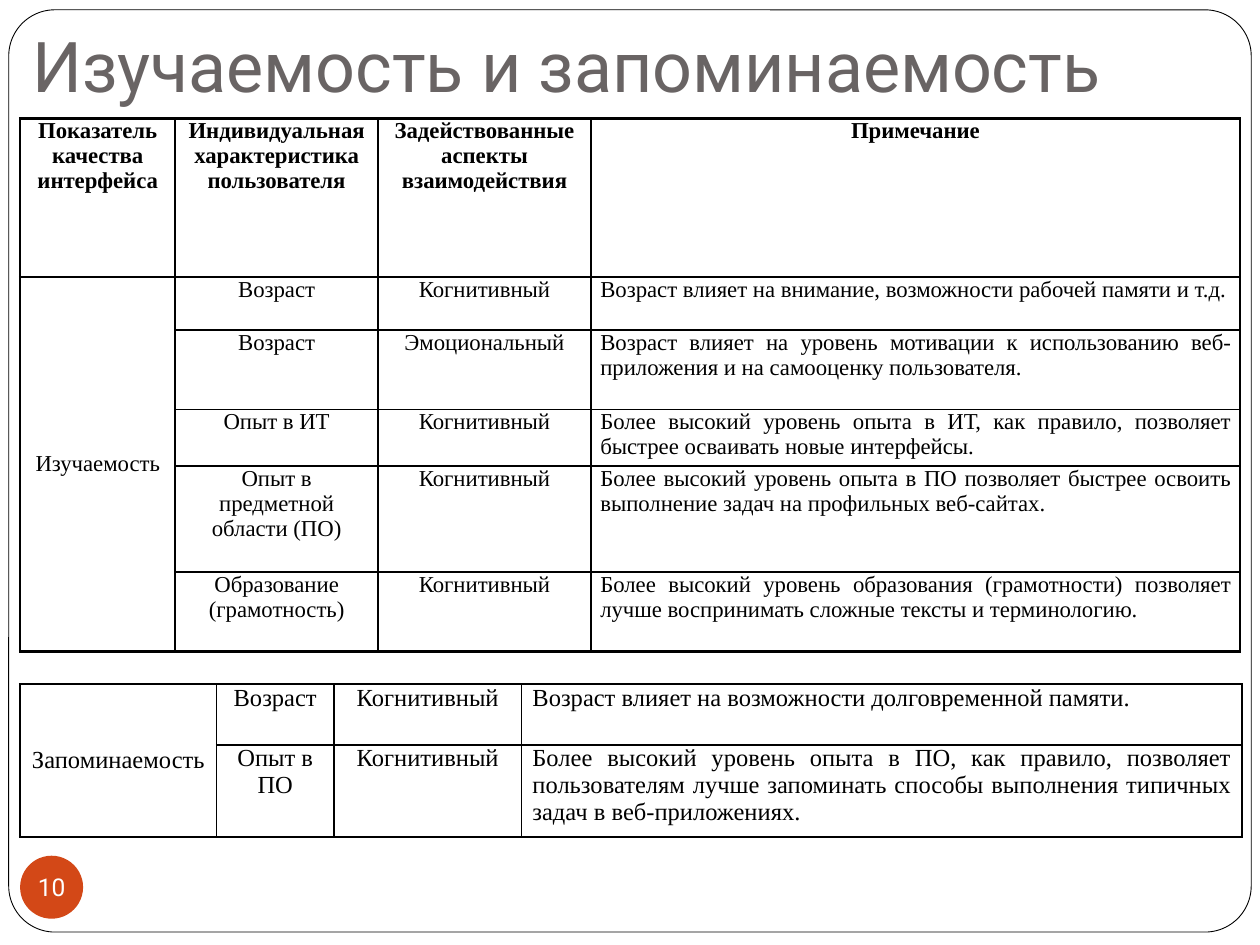
from dataclasses import dataclass

from lxml import etree
from pptx import Presentation
from pptx.dml.color import RGBColor
from pptx.enum import shapes, text
from pptx.oxml import ns
from pptx.util import Pt

BLACK = RGBColor(0x00, 0x00, 0x00)
WHITE = RGBColor(0xFF, 0xFF, 0xFF)
GREY = RGBColor(0x69, 0x64, 0x64)
ORANGE = RGBColor(0xD3, 0x48, 0x17)
HEADING_FONT = "Roboto"
TABLE_FONT = "Times New Roman"
THIN, THICK = 1, 1.5
LEFT = 11.5


@dataclass
class Grid:
    top: float
    cols: list[float]
    rows: list[float]
    cells: list[list[str]]
    size: float
    inset: float
    header_rows: int


LEARNABILITY = Grid(
    top=67.7,
    cols=[88.6, 115.9, 121.7, 370.8],
    rows=[90.7, 30.2, 45.4, 32.4, 60.5, 45.4],
    cells=[
        ["Показатель качества интерфейса", "Индивидуальная характеристика пользователя",
         "Задействованные аспекты взаимодействия", "Примечание"],
        ["Изучаемость", "Возраст", "Когнитивный",
         "Возраст влияет на внимание, возможности рабочей памяти и т.д."],
        ["", "Возраст", "Эмоциональный",
         "Возраст влияет на уровень мотивации к использованию веб-приложения "
         "и на самооценку пользователя."],
        ["", "Опыт в ИТ", "Когнитивный",
         "Более высокий уровень опыта в ИТ, как правило, позволяет быстрее "
         "осваивать новые интерфейсы."],
        ["", "Опыт в предметной области (ПО)", "Когнитивный",
         "Более высокий уровень опыта в ПО позволяет быстрее освоить "
         "выполнение задач на профильных веб-сайтах."],
        ["", "Образование (грамотность)", "Когнитивный",
         "Более высокий уровень образования (грамотности) позволяет лучше "
         "воспринимать сложные тексты и терминологию."],
    ],
    size=13, inset=5.4, header_rows=1,
)

MEMORABILITY = Grid(
    top=391,
    cols=[112.3, 67, 107.3, 411.8],
    rows=[34.6, 52.6],
    cells=[
        ["Запоминаемость", "Возраст", "Когнитивный",
         "Возраст влияет на возможности долговременной памяти."],
        ["", "Опыт в ПО", "Когнитивный",
         "Более высокий уровень опыта в ПО, как правило, позволяет пользователям "
         "лучше запоминать способы выполнения типичных задач в веб-приложениях."],
    ],
    size=14, inset=6.2, header_rows=0,
)


def set_font(p, name: str, size: float, color: RGBColor, bold: bool = False) -> None:
    p.font.name, p.font.size, p.font.bold = name, Pt(size), bold
    p.font.color.rgb = color


def set_margins(obj, left: float, top: float, right: float, bottom: float) -> None:
    obj.margin_left, obj.margin_top = Pt(left), Pt(top)
    obj.margin_right, obj.margin_bottom = Pt(right), Pt(bottom)


def set_borders(cell, widths: dict[str, float]) -> None:
    tc_pr = cell._tc.get_or_add_tcPr()
    for side, width in widths.items():
        ln = etree.SubElement(tc_pr, ns.qn(f"a:ln{side}"), w=str(Pt(width)))
        fill = etree.SubElement(ln, ns.qn("a:solidFill"))
        etree.SubElement(fill, ns.qn("a:srgbClr"), val=str(BLACK))


def add_grid(s, grid: Grid) -> None:
    n_rows, n_cols = len(grid.rows), len(grid.cols)
    frame = s.shapes.add_table(n_rows, n_cols, Pt(LEFT), Pt(grid.top),
                               Pt(sum(grid.cols)), Pt(sum(grid.rows)))
    table = frame.table
    table.first_row = table.horz_banding = False
    for col, width in zip(table.columns, grid.cols):
        col.width = Pt(width)
    for row, height in zip(table.rows, grid.rows):
        row.height = Pt(height)
    table.cell(grid.header_rows, 0).merge(table.cell(n_rows - 1, 0))

    thick_rows = {0, grid.header_rows, n_rows}
    for i, row in enumerate(grid.cells):
        for j, value in enumerate(row):
            cell = table.cell(i, j)
            if cell.is_spanned:
                cell.fill.background()
                continue
            end = i + cell.span_height
            set_borders(cell, {
                "L": THICK if j == 0 else THIN,
                "R": THICK if j == n_cols - 1 else THIN,
                "T": THICK if i in thick_rows else THIN,
                "B": THICK if end in thick_rows else THIN,
            })
            cell.fill.background()
            set_margins(cell, grid.inset, 0, grid.inset, 0)
            if cell.is_merge_origin:
                cell.vertical_anchor = text.MSO_ANCHOR.MIDDLE
            header = i < grid.header_rows
            p = cell.text_frame.paragraphs[0]
            p.text = value
            p.space_before = p.space_after = Pt(2)
            note = j == n_cols - 1 and not header
            p.alignment = text.PP_ALIGN.JUSTIFY if note else text.PP_ALIGN.CENTER
            set_font(p, TABLE_FONT, grid.size, BLACK, header)


def add_frame(s) -> None:
    sp = s.shapes.add_shape(shapes.MSO_SHAPE.ROUNDED_RECTANGLE,
                            Pt(5), Pt(5.6), Pt(710), Pt(527))
    sp.adjustments[0] = 0.05
    sp.shadow.inherit = False
    sp.fill.solid()
    sp.fill.fore_color.rgb = WHITE
    sp.line.color.rgb = BLACK
    sp.line.width = Pt(0.5)


def add_title(s, title: str) -> None:
    tf = s.shapes.add_textbox(Pt(LEFT), Pt(5.6), Pt(698), Pt(62.6)).text_frame
    tf.word_wrap = True
    tf.vertical_anchor = text.MSO_ANCHOR.BOTTOM
    set_margins(tf, 7.2, 3.6, 7.2, 7.2)
    p = tf.paragraphs[0]
    p.text = title
    set_font(p, HEADING_FONT, 40, GREY)


def add_page_number(s, number: str) -> None:
    sp = s.shapes.add_shape(shapes.MSO_SHAPE.OVAL, Pt(LEFT), Pt(489), Pt(36), Pt(36))
    sp.shadow.inherit = False
    sp.fill.solid()
    sp.fill.fore_color.rgb = ORANGE
    sp.line.fill.background()
    tf = sp.text_frame
    tf.word_wrap = False
    tf.vertical_anchor = text.MSO_ANCHOR.MIDDLE
    set_margins(tf, 0, 0, 0, 0)
    p = tf.paragraphs[0]
    p.text = number
    p.alignment = text.PP_ALIGN.CENTER
    set_font(p, HEADING_FONT, 14, WHITE)


def main() -> None:
    prs = Presentation()
    prs.slide_width, prs.slide_height = Pt(720), Pt(540)
    s = prs.slides.add_slide(prs.slide_layouts[6])
    add_frame(s)
    add_title(s, "Изучаемость и запоминаемость")
    add_grid(s, LEARNABILITY)
    add_page_number(s, "10")
    add_grid(s, MEMORABILITY)
    prs.save("out.pptx")


if __name__ == "__main__":
    main()
